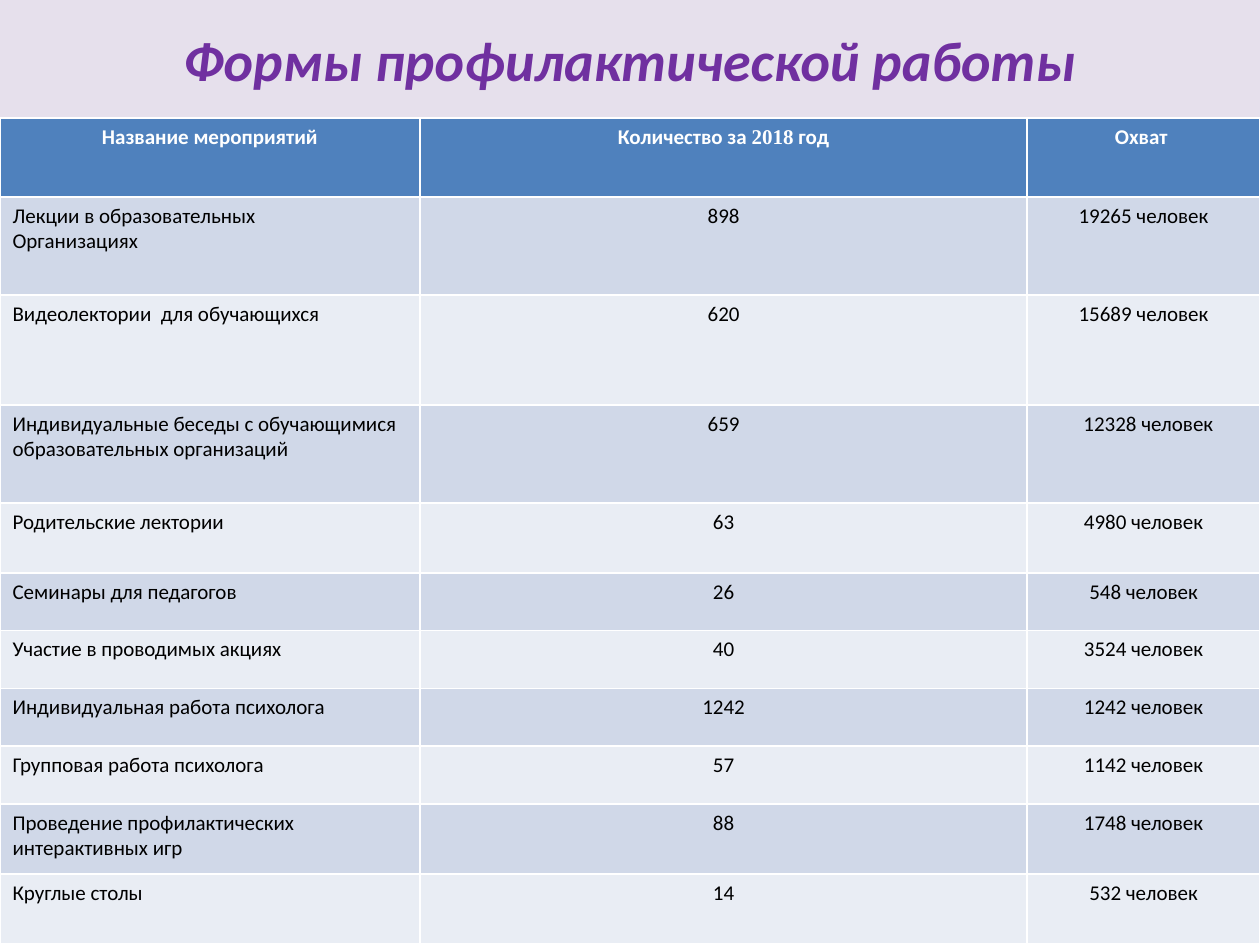
"""Build a slide with a table of preventive work activities."""
from pptx import Presentation
from pptx.dml.color import RGBColor
from pptx.enum.text import MSO_ANCHOR, PP_ALIGN
from pptx.util import Pt

LEFT, CENTER = PP_ALIGN.LEFT, PP_ALIGN.CENTER
MIDDLE = MSO_ANCHOR.MIDDLE
COLORS = {
    "background": "EEECE1",
    "title_fill": "E6E0EC",
    "title": "7030A0",
    "header": "4F81BD",
    "odd": "D0D8E8",
    "even": "E9EDF4",
    "white": "FFFFFF",
    "black": "000000",
}


def rgb(name):
    return RGBColor.from_string(COLORS[name])


def add_run(p, text, size, color, bold=False, italic=False, font="Calibri"):
    r = p.add_run()
    r.text = text
    r.font.name = font
    r.font.size = Pt(size)
    r.font.bold = bold
    r.font.italic = italic
    r.font.color.rgb = rgb(color)


prs = Presentation()
prs.slide_width, prs.slide_height = Pt(720), Pt(540)
s = prs.slides.add_slide(prs.slide_layouts[5])
s.background.fill.solid()
s.background.fill.fore_color.rgb = rgb("background")

title = s.shapes.title
title.left, title.top, title.width, title.height = Pt(0), Pt(0), Pt(720), Pt(67.5)
title.fill.solid()
title.fill.fore_color.rgb = rgb("title_fill")
tf = title.text_frame
tf.vertical_anchor = MIDDLE
p = tf.paragraphs[0]
p.alignment = CENTER
add_run(p, "Формы профилактической работы", 32, "title", bold=True, italic=True)

header = [
    [("Название мероприятий", "Calibri")],
    [("Количество за ", "Calibri"), ("2018", "Times New Roman"), (" год", "Calibri")],
    [("Охват ", "Calibri")],
]
activities = [
    ("Лекции в образовательных\nОрганизациях", 898, 19265),
    ("Видеолектории  для обучающихся", 620, 15689),
    ("Индивидуальные беседы с обучающимися образовательных организаций", 659, 12328),
    ("Родительские лектории", 63, 4980),
    ("Семинары для педагогов", 26, 548),
    ("Участие в проводимых акциях", 40, 3524),
    ("Индивидуальная работа психолога", 1242, 1242),
    ("Групповая работа психолога", 57, 1142),
    ("Проведение профилактических интерактивных игр", 88, 1748),
    ("Круглые столы", 14, 532),
]
col_widths = [240, 347, 133]
row_heights = [45, 56, 63, 56, 40, 33, 33, 33, 33, 40, 40]

table = s.shapes.add_table(
    len(row_heights), len(col_widths), Pt(0), Pt(67.5), Pt(720), Pt(sum(row_heights))
).table
for col, width in zip(table.columns, col_widths):
    col.width = Pt(width)
for row, height in zip(table.rows, row_heights):
    row.height = Pt(height)

for j, runs in enumerate(header):
    cell = table.cell(0, j)
    cell.fill.solid()
    cell.fill.fore_color.rgb = rgb("header")
    p = cell.text_frame.paragraphs[0]
    p.alignment = CENTER
    for text, font in runs:
        add_run(p, text, 12, "white", bold=True, font=font)

for i, (name, count, people) in enumerate(activities, start=1):
    for j, text in enumerate([name, str(count), f"{people} человек"]):
        cell = table.cell(i, j)
        cell.fill.solid()
        cell.fill.fore_color.rgb = rgb("odd" if i % 2 else "even")
        tf = cell.text_frame
        for k, line in enumerate(text.split("\n")):
            p = tf.add_paragraph() if k else tf.paragraphs[0]
            p.alignment = CENTER if j else LEFT
            add_run(p, line, 12, "black")
table.cell(3, 2).margin_left = Pt(12.7)

prs.save("out.pptx")
